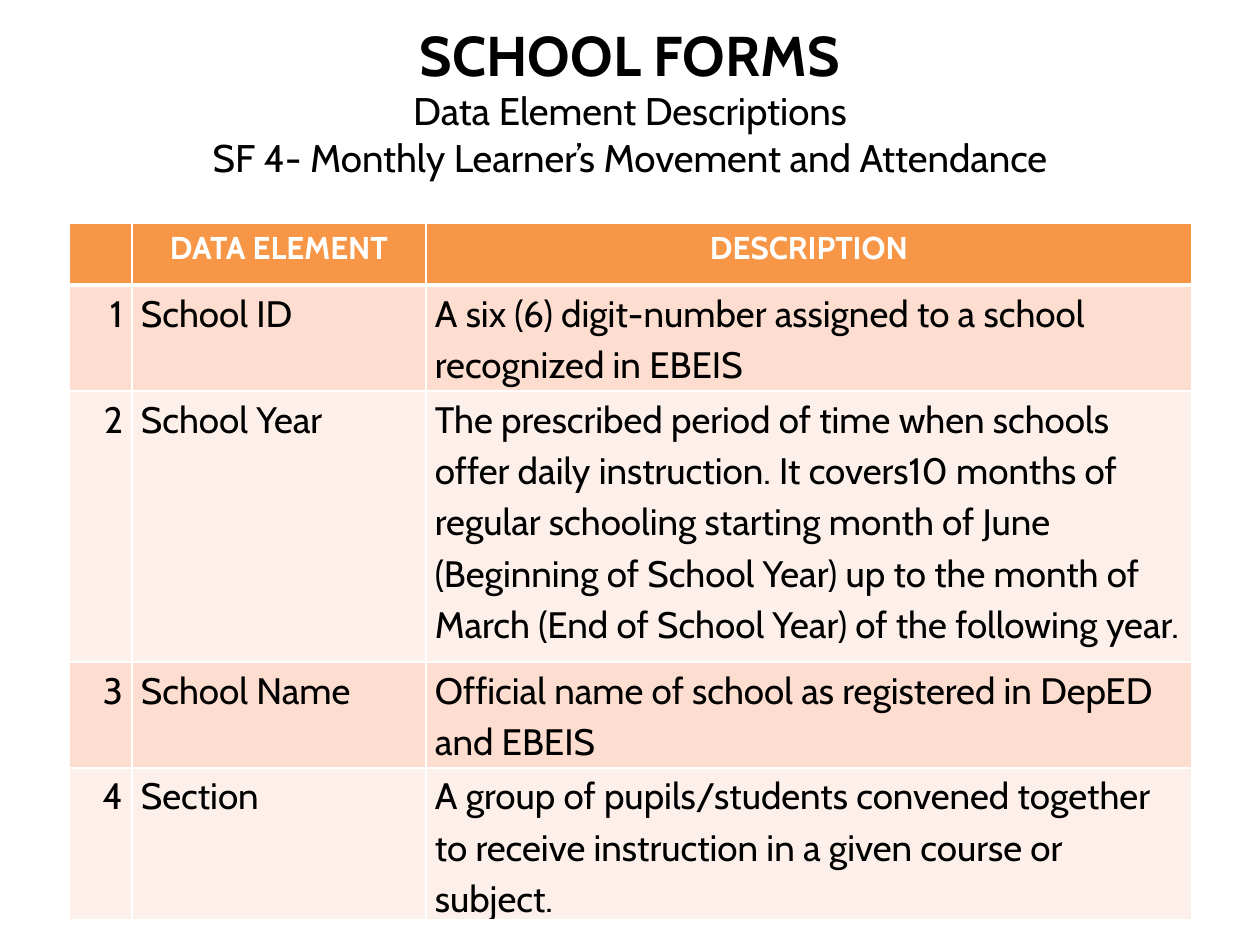
from typing import NamedTuple

from lxml.etree import SubElement
from pptx import Presentation
from pptx.dml.color import RGBColor
from pptx.enum.text import MSO_ANCHOR, PP_ALIGN
from pptx.oxml.ns import qn
from pptx.util import Pt

PX = 914400 // 126
FONT = "Cabin"
BLACK = RGBColor(0x00, 0x00, 0x00)
WHITE = RGBColor(0xFF, 0xFF, 0xFF)
ORANGE = RGBColor(0xF7, 0x96, 0x46)
PEACH = RGBColor(0xFC, 0xDD, 0xCF)
PALE_PEACH = RGBColor(0xFD, 0xEF, 0xE9)


class Element(NamedTuple):
    name: str
    description: str
    height: int


class TextStyle(NamedTuple):
    size: int
    color: RGBColor
    bold: bool = False


HEADING = TextStyle(32, BLACK, True)
SUBHEADING = TextStyle(22, BLACK)
HEADER = TextStyle(18, WHITE, True)
BODY = TextStyle(21, BLACK)

TITLE_LINES = [
    ("SCHOOL FORMS", HEADING),
    ("Data Element Descriptions", SUBHEADING),
    ("SF 4- Monthly Learner’s Movement and Attendance", SUBHEADING),
]
COLUMN_WIDTHS = [63, 294, 766]
HEADER_HEIGHT = 62
ELEMENTS = [
    Element("School ID",
            "A six (6) digit-number assigned to a school recognized in EBEIS", 106),
    Element("School Year",
            "The prescribed period of time when schools offer daily instruction. "
            "It covers10 months of regular schooling starting month of June "
            "(Beginning of School Year) up to the month of March "
            "(End of School Year) of the following year.", 271),
    Element("School Name",
            "Official name of school as registered in DepED and EBEIS", 106),
    Element("Section",
            "A group of pupils/students convened together to receive instruction "
            "in a given course or subject.", 106),
]


def add_run(paragraph, text: str, style: TextStyle) -> None:
    run = paragraph.add_run()
    run.text = text
    run.font.name = FONT
    run.font.size = Pt(style.size)
    run.font.bold = style.bold
    run.font.color.rgb = style.color


def add_title(slide) -> None:
    title = slide.shapes.add_textbox(63 * PX, 21 * PX, 1134 * PX, 158 * PX)
    frame = title.text_frame
    frame.word_wrap = True
    frame.vertical_anchor = MSO_ANCHOR.MIDDLE
    paragraph = frame.paragraphs[0]
    paragraph.alignment = PP_ALIGN.CENTER
    for index, (text, style) in enumerate(TITLE_LINES):
        if index:
            paragraph.add_line_break()
        add_run(paragraph, text, style)


def set_borders(cell, top: int, bottom: int) -> None:
    properties = cell._tc.get_or_add_tcPr()
    for side, width in (("L", 1), ("R", 1), ("T", top), ("B", bottom)):
        line = SubElement(properties, qn(f"a:ln{side}"), w=str(Pt(width)))
        fill = SubElement(line, qn("a:solidFill"))
        SubElement(fill, qn("a:srgbClr"), val=str(WHITE))


def fill_cell(cell, text: str, style: TextStyle, align: PP_ALIGN,
              color: RGBColor, top: int = 1, bottom: int = 1) -> None:
    set_borders(cell, top, bottom)
    cell.fill.solid()
    cell.fill.fore_color.rgb = color
    cell.margin_left = cell.margin_right = 9 * PX
    cell.margin_top = cell.margin_bottom = 0
    if text:
        paragraph = cell.text_frame.paragraphs[0]
        paragraph.alignment = align
        paragraph.line_spacing = 1.15
        add_run(paragraph, text, style)


def add_elements_table(slide) -> None:
    heights = [HEADER_HEIGHT] + [element.height for element in ELEMENTS]
    table = slide.shapes.add_table(
        len(heights), len(COLUMN_WIDTHS), 69 * PX, 223 * PX,
        sum(COLUMN_WIDTHS) * PX, sum(heights) * PX).table
    for column, width in zip(table.columns, COLUMN_WIDTHS):
        column.width = width * PX
    for row, height in zip(table.rows, heights):
        row.height = height * PX

    for column, label in enumerate(["", "DATA ELEMENT", "DESCRIPTION"]):
        fill_cell(table.cell(0, column), label, HEADER, PP_ALIGN.CENTER,
                  ORANGE, bottom=3)
    for number, element in enumerate(ELEMENTS, 1):
        color = PEACH if number % 2 else PALE_PEACH
        texts = [str(number), element.name, element.description]
        for column, text in enumerate(texts):
            align = PP_ALIGN.LEFT if column else PP_ALIGN.RIGHT
            fill_cell(table.cell(number, column), text, BODY, align, color,
                      top=3 if number == 1 else 1)


def main() -> None:
    presentation = Presentation()
    presentation.slide_width = 1260 * PX
    presentation.slide_height = 945 * PX
    slide = presentation.slides.add_slide(presentation.slide_layouts[6])
    add_title(slide)
    add_elements_table(slide)
    presentation.save("out.pptx")


if __name__ == "__main__":
    main()
